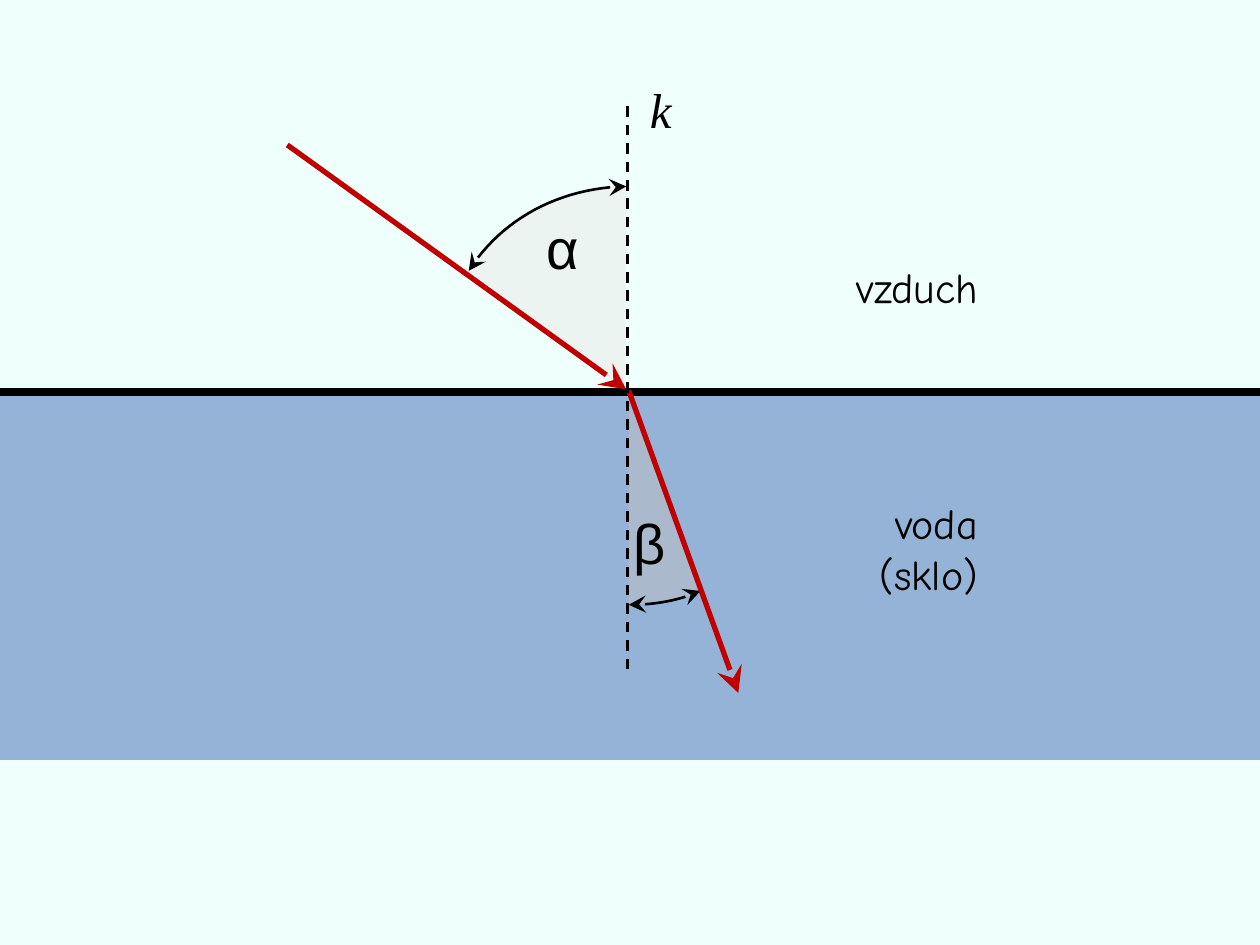
from pptx import Presentation
from pptx.dml.color import RGBColor
from pptx.enum.dml import MSO_LINE_DASH_STYLE as Dash
from pptx.enum.shapes import MSO_CONNECTOR as Connector, MSO_SHAPE as Shape
from pptx.enum.text import MSO_ANCHOR as Anchor, PP_ALIGN as Align
from pptx.oxml.ns import qn
from pptx.util import Inches, Pt
from lxml.etree import SubElement

BLACK, RED, WATER, BACKGROUND = "000000", "C00000", "95B3D7", "EFFFFB"

LINES = {
    "interface": dict(start=(0, 3.11), end=(10, 3.11), color=BLACK, width=4.5),
    "incident ray": dict(start=(2.28, 1.15), end=(4.97, 3.09), color=RED, width=3, arrow=True),
    "refracted ray": dict(start=(4.99, 3.1), end=(5.86, 5.5), color=RED, width=3, arrow=True),
    "normal": dict(start=(4.98, 5.31), end=(4.98, 0.8), color=BLACK, width=1.5, dashed=True),
}
ANGLES = [
    dict(curve=[(3.72, 2.15), (3.98, 1.74), (4.44, 1.49), (4.97, 1.48)], apex=(4.96, 3.09), color="EAEAEA"),
    dict(curve=[(5.56, 4.69), (5.38, 4.77), (5.19, 4.8), (4.99, 4.8)], apex=(4.99, 3.18), color="C0C0C0"),
]
LABELS = [
    ("α", (4.06, 1.42, 0.87, 0.9), dict(size=32, font="Arial", left=0.28, bottom=0.09, anchor=Anchor.BOTTOM)),
    ("β", (4.93, 3.99, 0.87, 0.63), dict(size=32, font="Arial")),
    ("k", (5.06, 0.67, 0.37, 0.47), dict(size=28, font="Times New Roman", italic=True, spacing=0.8)),
    ("vzduch", (6.7, 2.03, 1.29, 0.5), dict(size=24, font="Comic Neue")),
    ("voda\n(sklo)", (6.8, 3.9, 1.06, 0.91), dict(size=24, font="Comic Neue", align=Align.RIGHT)),
]


def paint(fill, color):
    fill.solid()
    fill.fore_color.rgb = RGBColor.from_string(color)


def style_line(shape, color, width, ends=()):
    paint(shape.line.fill, color)
    shape.line.width = Pt(width)
    properties = shape.line.fill._xPr
    for end in ends:
        SubElement(properties, qn(f"a:{end}"), type="stealth", w="lg", len="lg")


def add_line(slide, start, end, color, width, arrow=False, dashed=False):
    line = slide.shapes.add_connector(Connector.STRAIGHT, *map(Inches, start + end))
    style_line(line, color, width, ["tailEnd"] if arrow else [])
    if dashed:
        line.line.dash_style = Dash.DASH
    SubElement(line._element.spPr, qn("a:effectLst"))


def bezier(controls, steps=24):
    def point(t):
        weights = ((1 - t) ** 3, 3 * t * (1 - t) ** 2, 3 * t * t * (1 - t), t ** 3)
        return tuple(sum(w * c[axis] for w, c in zip(weights, controls)) for axis in (0, 1))

    return [point(step / steps) for step in range(steps + 1)]


def add_outline(slide, points, close):
    start, *rest = [(Inches(x), Inches(y)) for x, y in points]
    builder = slide.shapes.build_freeform(*start)
    builder.add_line_segments(rest, close=close)
    shape = builder.convert_to_shape()
    shape.shadow.inherit = False
    return shape


def add_angle(slide, curve, apex, color):
    points = bezier(curve)
    sector = add_outline(slide, points + [apex], close=True)
    paint(sector.fill, color)
    sector.line.fill.background()
    solid_color = sector.fill._xPr.find(qn("a:solidFill"))[0]
    SubElement(solid_color, qn("a:alpha"), val="50000")
    arc = add_outline(slide, points, close=False)
    arc.fill.background()
    style_line(arc, BLACK, 1.5, ["headEnd", "tailEnd"])


def add_text(slide, text, box, size, font, italic=False, align=Align.LEFT,
             anchor=Anchor.TOP, left=0.1, bottom=0.05, spacing=1.0):
    frame = slide.shapes.add_textbox(*map(Inches, box)).text_frame
    frame.word_wrap = True
    frame.vertical_anchor = anchor
    frame.margin_left, frame.margin_bottom = Inches(left), Inches(bottom)
    frame.text = text
    for paragraph in frame.paragraphs:
        paragraph.alignment = align
        paragraph.line_spacing = spacing
        for run in paragraph.runs:
            run.font.size, run.font.name, run.font.italic = Pt(size), font, italic
            run.font.color.rgb = RGBColor.from_string(BLACK)


def main():
    presentation = Presentation()
    presentation.slide_width, presentation.slide_height = Inches(10), Inches(7.5)
    slide = presentation.slides.add_slide(presentation.slide_layouts[6])
    paint(slide.background.fill, BACKGROUND)

    water = slide.shapes.add_shape(Shape.RECTANGLE, *map(Inches, (0, 3.14, 10, 2.89)))
    water.shadow.inherit = False
    paint(water.fill, WATER)
    water.line.fill.background()

    for angle in ANGLES:
        add_angle(slide, **angle)
    for line in LINES.values():
        add_line(slide, **line)
    for text, box, style in LABELS:
        add_text(slide, text, box, **style)
    presentation.save("out.pptx")


if __name__ == "__main__":
    main()
